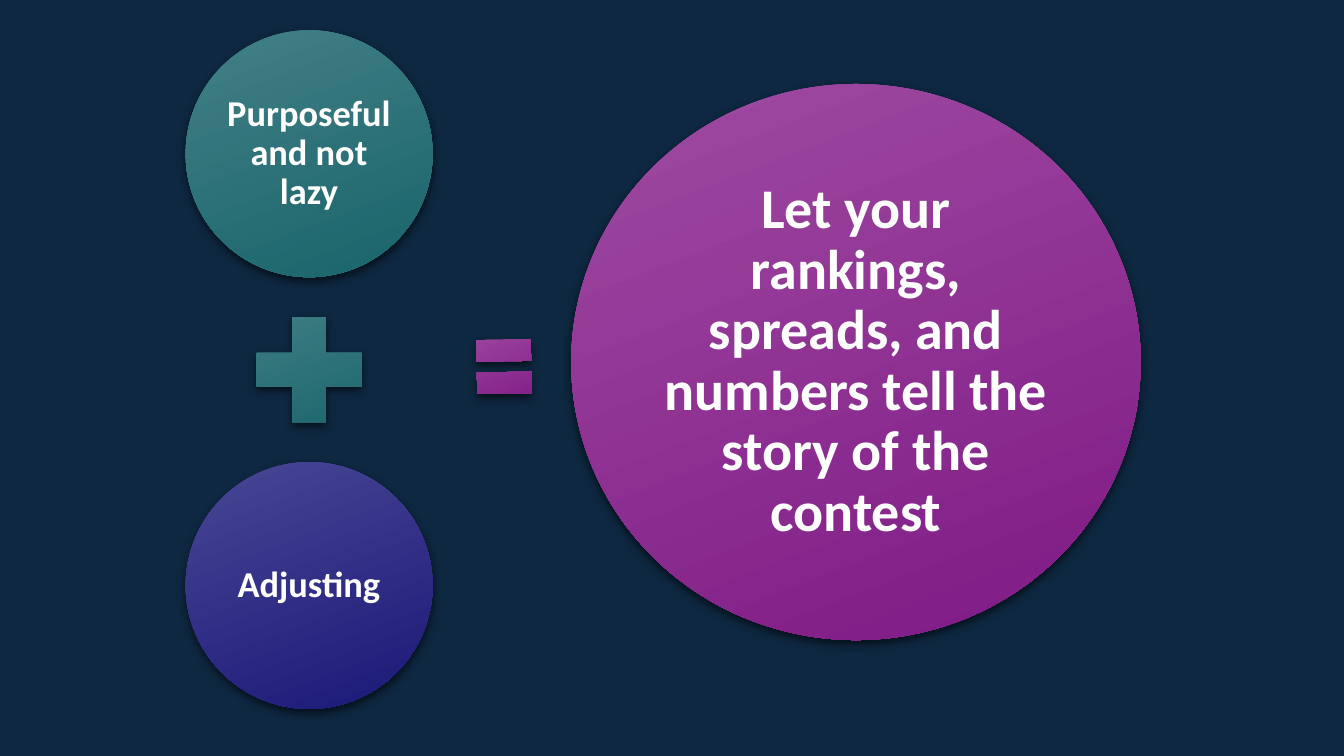
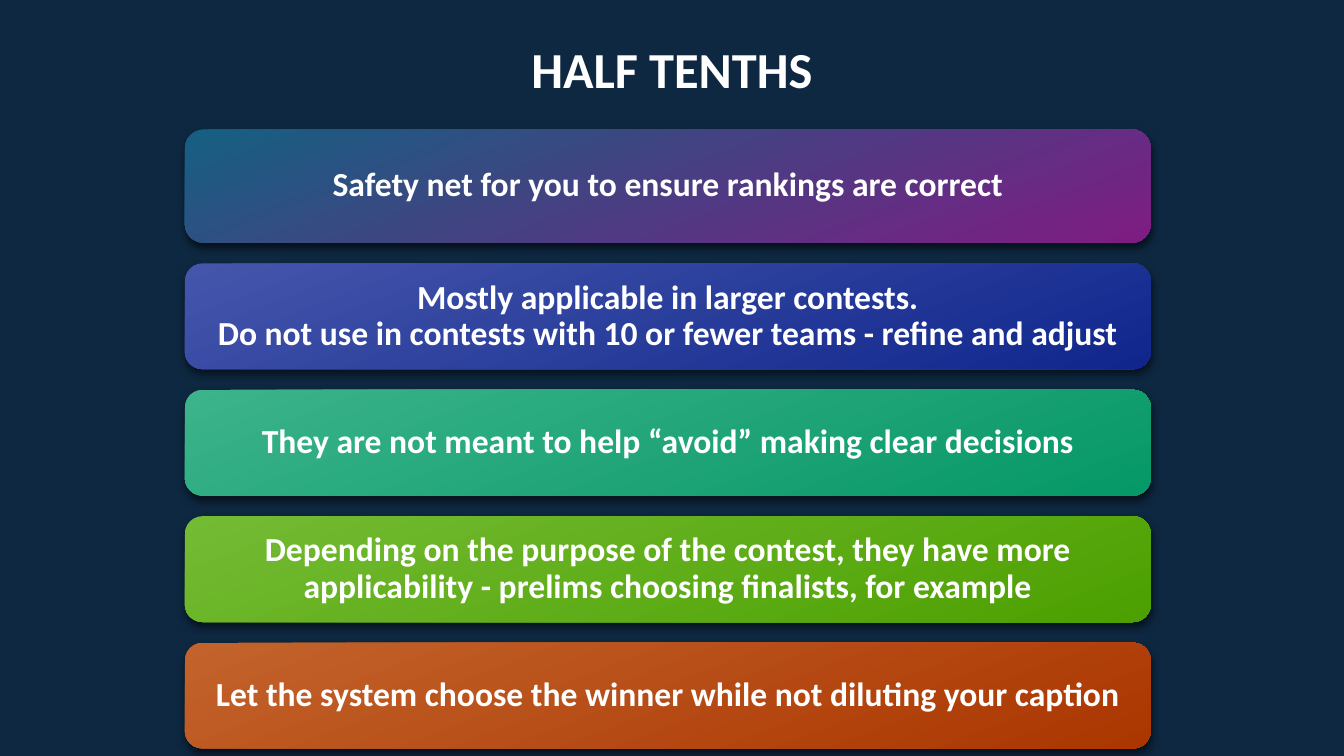
from dataclasses import dataclass

from lxml.etree import SubElement
from pptx import Presentation
from pptx.dml.color import RGBColor
from pptx.enum.shapes import MSO_SHAPE
from pptx.enum.text import MSO_ANCHOR, PP_ALIGN
from pptx.oxml.ns import qn
from pptx.util import Emu, Inches, Pt

# Shared look: a grid of 160 columns by 90 rows
COLUMNS, ROWS = 160, 90
CELL = Inches(7.5) // ROWS
FONT = "Calibri"
GRADIENT_ANGLE = 291  # counter-clockwise, runs down to the right
COLOURS = {
    "background": "0E2841",
    "text": "FFFFFF",
    "shadow": "000000",
    "teal": ("428086", "19646B"),
    "indigo": ("484694", "1B1978"),
    "purple": ("9F4BA2", "7E1984"),
    "blue to purple": ("156082", "7F1C83"),
    "blue": ("4456AB", "10268D"),
    "green": ("3CB38B", "069867"),
    "lime": ("74BB34", "4CA000"),
    "orange": ("C3632C", "AB3600"),
}


@dataclass(frozen=True)
class Part:
    """A gradient shape, measured in grid cells."""
    kind: MSO_SHAPE
    left: float
    top: float
    width: float
    height: float
    colour: str
    text: str = ""
    size: float = 24
    inset: float = 0.1
    adjustments: tuple[float, ...] = ()
    rotation: float = 0


def cells(*counts: float) -> list[Emu]:
    return [Emu(round(count * CELL)) for count in counts]


def stack(top: float, heights: list[float], gap: float) -> list[float]:
    """Tops of items that follow each other with equal gaps."""
    return [top + sum(heights[:i]) + gap * i for i in range(len(heights))]


def write_text(shape, text: str, *, size: float, margins: tuple[float, float],
               anchor=MSO_ANCHOR.MIDDLE, spacing: float = 0.9) -> None:
    frame = shape.text_frame
    frame.word_wrap = True
    frame.vertical_anchor = anchor
    frame.margin_left = frame.margin_right = Inches(margins[0])
    frame.margin_top = frame.margin_bottom = Inches(margins[1])
    paragraph = frame.paragraphs[0]
    paragraph.alignment = PP_ALIGN.CENTER
    paragraph.line_spacing = spacing
    for number, line in enumerate(text.splitlines()):
        if number:
            paragraph.add_line_break()
        run = paragraph.add_run()
        run.text = line
        run.font.name = FONT
        run.font.size = Pt(size)
        run.font.bold = True
        run.font.color.rgb = RGBColor.from_string(COLOURS["text"])


def add_shadow(shape) -> None:
    shape.shadow.inherit = False
    effects = shape._element.spPr.find(qn("a:effectLst"))
    shadow = SubElement(effects, qn("a:outerShdw"), blurRad=str(Pt(6)),
                        dist=str(Pt(3)), dir="5400000", rotWithShape="0")
    colour = SubElement(shadow, qn("a:srgbClr"), val=COLOURS["shadow"])
    SubElement(colour, qn("a:alpha"), val="60000")


def add_part(slide, part: Part) -> None:
    shape = slide.shapes.add_shape(
        part.kind, *cells(part.left, part.top, part.width, part.height))
    for number, value in enumerate(part.adjustments):
        shape.adjustments[number] = value
    shape.rotation = part.rotation
    shape.fill.gradient()
    shape.fill.gradient_angle = GRADIENT_ANGLE
    for stop, colour in zip(shape.fill.gradient_stops, COLOURS[part.colour]):
        stop.color.rgb = RGBColor.from_string(colour)
    shape.line.fill.background()
    add_shadow(shape)
    if part.text:
        write_text(shape, part.text, size=part.size,
                   margins=(part.inset, part.inset))


def add_title(slide, text: str) -> None:
    box = slide.shapes.add_textbox(*cells(24, 4, 112, 8.5))
    write_text(box, text, size=36, margins=(0.1, 0.05),
               anchor=MSO_ANCHOR.TOP, spacing=1)


def build_equation(slide) -> None:
    # Two circles with a plus between them, centred in one column
    circle, plus, left = 29.4, 17, 22.1
    first, middle, last = stack(3.6, [circle, plus, circle], 2.5)
    oval = MSO_SHAPE.OVAL
    parts = [
        Part(oval, left, first, circle, circle, "teal",
             "Purposeful and not lazy", 26, 0.04),
        Part(MSO_SHAPE.MATH_PLUS, left + (circle - plus) / 2, middle, plus, plus,
             "teal", adjustments=(0.235,)),
        Part(oval, left, last, circle, circle, "indigo", "Adjusting", 26, 0.04),
        # Equals sign and result
        Part(MSO_SHAPE.MATH_EQUAL, 55.6, 38.2, 8.8, 10.9, "purple",
             adjustments=(0.235, 0.118), rotation=359.2),
        Part(oval, 68, 10, 67.8, 66.2, "purple",
             "Let your rankings, spreads, and numbers tell the story of the contest",
             40, 0.06),
    ]
    for part in parts:
        add_part(slide, part)


def build_half_tenths(slide) -> None:
    bars = [
        ("blue to purple", "Safety net for you to ensure rankings are correct"),
        ("blue", "Mostly applicable in larger contests.\n"
                 "Do not use in contests with 10 or fewer teams - refine and adjust"),
        ("green", "They are not meant to help “avoid” making clear decisions"),
        ("lime", "Depending on the purpose of the contest, they have more "
                 "applicability - prelims choosing finalists, for example"),
        ("orange", "Let the system choose the winner while not diluting your caption"),
    ]
    # The first bar is a little taller than the rest
    heights = [13.5] + [12.6] * (len(bars) - 1)
    tops = stack(15.4, heights, 2.45)
    for (colour, text), top, height in zip(bars, tops, heights):
        add_part(slide, Part(MSO_SHAPE.ROUNDED_RECTANGLE, 22, top, 115, height,
                             colour, text, adjustments=(0.167,)))
    add_title(slide, "HALF TENTHS")


def main() -> None:
    presentation = Presentation()
    presentation.slide_width, presentation.slide_height = cells(COLUMNS, ROWS)
    background = presentation.slide_master.background.fill
    background.solid()
    background.fore_color.rgb = RGBColor.from_string(COLOURS["background"])
    blank = presentation.slide_layouts[6]
    for build in (build_equation, build_half_tenths):
        build(presentation.slides.add_slide(blank))
    presentation.save("out.pptx")


if __name__ == "__main__":
    main()
